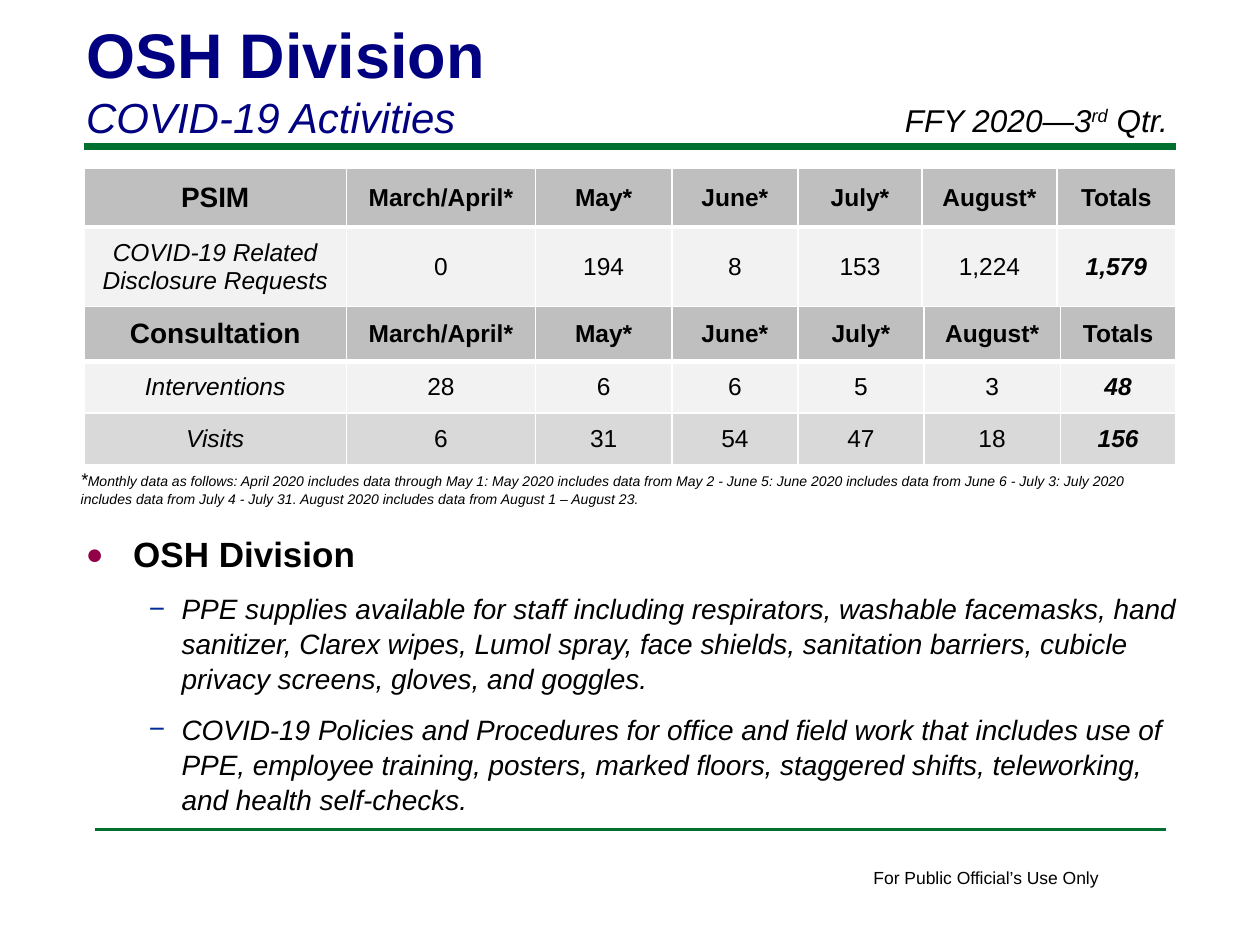
from lxml.etree import SubElement
from pptx import Presentation
from pptx.dml.color import RGBColor
from pptx.enum.shapes import MSO_CONNECTOR
from pptx.enum.text import MSO_ANCHOR, MSO_AUTO_SIZE, PP_ALIGN
from pptx.oxml import parse_xml
from pptx.oxml.ns import nsdecls, qn
from pptx.util import Pt

BLACK = RGBColor(0x00, 0x00, 0x00)
WHITE = RGBColor(0xFF, 0xFF, 0xFF)
NAVY = RGBColor(0x00, 0x00, 0x80)
GREEN = RGBColor(0x00, 0x70, 0x30)
HEADER_GRAY = RGBColor(0xBF, 0xBF, 0xBF)
LIGHT_GRAY = RGBColor(0xF2, 0xF2, 0xF2)
BAND_GRAY = RGBColor(0xD9, 0xD9, 0xD9)
MAROON = RGBColor(0x91, 0x00, 0x46)
BLUE = RGBColor(0x01, 0x2D, 0x9A)

MONTHS = ["March/April*", "May*", "June*", "July*", "August*", "Totals"]
DISCLOSURES = [
    ["PSIM", *MONTHS],
    ["COVID-19 Related Disclosure Requests", "0", "194", "8", "153", "1,224", "1,579"],
]
CONSULTATION = [
    ["Consultation", *MONTHS],
    ["Interventions", "28", "6", "6", "5", "3", "48"],
    ["Visits", "6", "31", "54", "47", "18", "156"],
]
FOOTNOTE = (
    "Monthly data as follows: April 2020 includes data through May 1: May 2020 includes "
    "data from May 2 - June 5: June 2020 includes data from June 6 - July 3: July 2020 "
    "includes data from July 4 - July 31. August 2020 includes data from August 1 – August 23."
)
SUPPLIES = (
    "PPE supplies available for staff including respirators, washable facemasks, hand "
    "sanitizer, Clarex wipes, Lumol spray, face shields, sanitation barriers, cubicle "
    "privacy screens, gloves, and goggles."
)
POLICIES = (
    "COVID-19 Policies and Procedures for office and field work that includes use of PPE, "
    "employee training, posters, marked floors, staggered shifts, teleworking, and health "
    "self-checks."
)


def apply(target, values):
    for name, value in values.items():
        setattr(target, name, value)


class PageBuilder:
    """Holds the text style and the current slide."""

    font_name = "Arial"

    def __init__(self, page):
        self.page = page

    def span(self, para, text, size, color=BLACK, raised=False, **style):
        span = para.add_run()
        span.text = text
        apply(span.font, {"name": self.font_name, "size": Pt(size),
                          "bold": False, "italic": False, **style})
        span.font.color.rgb = color
        if raised:
            span._r.get_or_add_rPr().set("baseline", "30000")

    def paragraphs(self, frame, lines, **layout):
        """Fill a frame; each line is a list of (text, style) pairs."""
        apply(frame, {"word_wrap": True, "auto_size": MSO_AUTO_SIZE.NONE, **layout})
        for number, line in enumerate(lines):
            para = frame.paragraphs[0] if number == 0 else frame.add_paragraph()
            para.alignment = PP_ALIGN.LEFT
            for text, style in line:
                self.span(para, text, **style)

    def title(self, area, lines):
        title = self.page.shapes.title
        apply(title, dict(zip(("left", "top", "width", "height"), map(Pt, area))))
        self.paragraphs(title.text_frame, lines, vertical_anchor=MSO_ANCHOR.BOTTOM)

    def text(self, area, lines, **layout):
        box = self.page.shapes.add_textbox(*map(Pt, area))
        self.paragraphs(box.text_frame, lines, **layout)
        return box

    def rule(self, left, right, top, weight):
        rule = self.page.shapes.add_connector(
            MSO_CONNECTOR.STRAIGHT, Pt(left), Pt(top), Pt(right), Pt(top))
        rule.line.color.rgb = GREEN
        rule.line.width = Pt(weight)
        SubElement(rule._element.spPr, qn("a:effectLst"))

    def bullet(self, para, symbol, color, left, hang, percent=100, **spacing):
        props = para._p.get_or_add_pPr()
        props.set("marL", str(Pt(left)))
        props.set("indent", str(-Pt(hang)))
        for xml in (
            f'<a:buClr {nsdecls("a")}><a:srgbClr val="{color}"/></a:buClr>',
            f'<a:buSzPct {nsdecls("a")} val="{percent * 1000}"/>',
            f'<a:buFont {nsdecls("a")} typeface="{self.font_name}"/>',
            f'<a:buChar {nsdecls("a")} char="{symbol}"/>',
        ):
            props.append(parse_xml(xml))
        apply(para, {"line_spacing": 1.04, **spacing})

    def borders(self, cell, bottom):
        props = cell._tc.get_or_add_tcPr()
        weights = {"lnL": 1, "lnR": 1, "lnT": 1, "lnB": bottom}
        for place, (tag, weight) in enumerate(weights.items()):
            props.insert(place, parse_xml(
                f'<a:{tag} {nsdecls("a")} w="{Pt(weight)}"><a:solidFill>'
                f'<a:srgbClr val="{WHITE}"/></a:solidFill></a:{tag}>'))

    def table(self, left, top, widths, heights, rows):
        table = self.page.shapes.add_table(
            len(rows), len(widths), Pt(left), Pt(top),
            Pt(sum(widths)), Pt(sum(heights))).table
        for column, width in zip(table.columns, widths):
            column.width = Pt(width)
        fills = [HEADER_GRAY, LIGHT_GRAY, BAND_GRAY]
        last = len(widths) - 1
        for i, values in enumerate(rows):
            table.rows[i].height = Pt(heights[i])
            for j, value in enumerate(values):
                cell = table.cell(i, j)
                cell.fill.solid()
                cell.fill.fore_color.rgb = fills[i]
                cell.vertical_anchor = MSO_ANCHOR.MIDDLE
                self.borders(cell, bottom=3 if i == 0 else 1)
                para = cell.text_frame.paragraphs[0]
                para.alignment = PP_ALIGN.CENTER
                self.span(para, value, 16 if i == j == 0 else 14,
                          bold=i == 0 or j == last,
                          italic=i > 0 and j in (0, last))


def main():
    deck = Presentation()
    deck.slide_width, deck.slide_height = Pt(720), Pt(540)
    builder = PageBuilder(deck.slides.add_slide(deck.slide_layouts[5]))

    # Heading, rules and footer
    builder.rule(48, 672, 84, 4)
    builder.rule(54, 666, 474, 2)
    builder.text((492, 492, 145, 19.5),
                 [[("For Public Official’s Use Only", {"size": 10})]], word_wrap=False)
    builder.title((42, 4.5, 594, 80), [
        [("OSH Division", {"size": 36, "color": NAVY, "bold": True})],
        [("COVID-19 Activities", {"size": 24, "color": NAVY, "italic": True})],
    ])
    quarter = {"size": 18, "italic": True}
    builder.text((510, 54, 180, 29), [
        [("FFY 2020—3", quarter), ("rd", {**quarter, "raised": True}), (" Qtr.", quarter)],
    ])

    # Monthly tables
    builder.table(48, 96, [150, 108, 78, 72, 71, 77, 68], [33.8, 45.5], DISCLOSURES)
    builder.table(48, 175, [150, 108, 78, 72, 72, 78, 66], [31.4, 29.6, 29.6], CONSULTATION)
    builder.text((39, 264.2, 624, 29.5), [
        [("*", {"size": 10.5, "italic": True}), (FOOTNOTE, {"size": 8, "italic": True})],
    ])

    # Division notes
    detail = {"size": 16, "italic": True}
    notes = builder.text((42, 298.8, 638.6, 90.7), [
        [("OSH Division", {"size": 20, "bold": True})],
        [(SUPPLIES, detail)],
        [(POLICIES, detail)],
    ], margin_top=Pt(4.8))
    heading, *details = notes.text_frame.paragraphs
    builder.bullet(heading, "●", MAROON, 27, 27, percent=84)
    for para in details:
        builder.bullet(para, "−", BLUE, 54.7, 18.7, level=1, space_before=Pt(9))

    deck.save("out.pptx")


if __name__ == "__main__":
    main()
